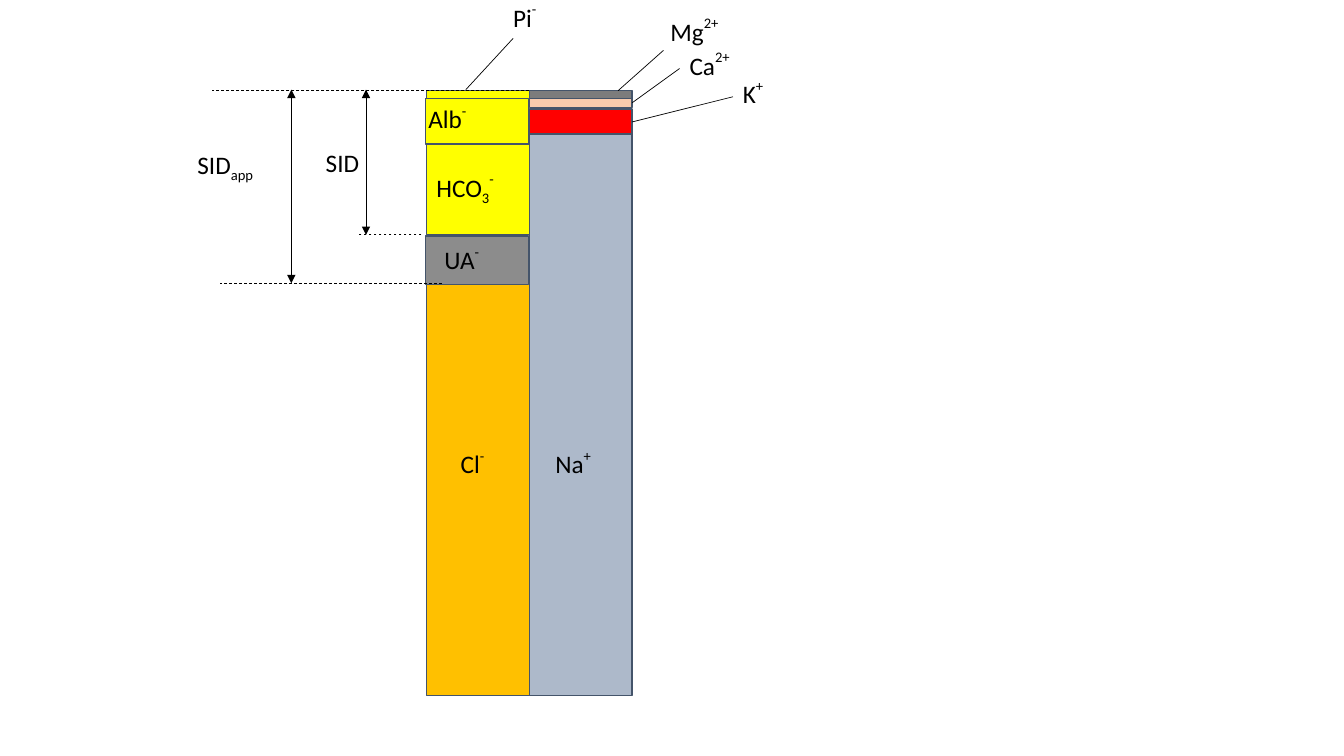
from lxml import etree
from pptx import Presentation
from pptx import util as u
from pptx.dml.color import RGBColor
from pptx.enum import dml, shapes, text
from pptx.oxml import ns

PX = 9144  # EMU per px, 100 px to the inch
BLACK = RGBColor(0x00, 0x00, 0x00)
SLATE = RGBColor(0x44, 0x54, 0x6A)
BLUE_GRAY = RGBColor(0xAD, 0xB9, 0xCA)
RED = RGBColor(0xFF, 0x00, 0x00)
PEACH = RGBColor(0xF8, 0xCB, 0xAD)
DARK_GRAY = RGBColor(0x7C, 0x7C, 0x7C)
GRAY = RGBColor(0x8C, 0x8C, 0x8C)
ORANGE = RGBColor(0xFF, 0xC0, 0x00)
YELLOW = RGBColor(0xFF, 0xFF, 0x00)
BAR_WIDTH = 102
ANION_LEFT, CATION_LEFT = 423, 525
SUPER, SUB = 50000, -25000

deck = Presentation()
deck.slide_width, deck.slide_height = 1333 * PX, 750 * PX
page = deck.slides.add_slide(deck.slide_layouts[6])


def add_block(parent, left, top, height, color):
    block = parent.shapes.add_shape(
        shapes.MSO_SHAPE.RECTANGLE, left * PX, top * PX, BAR_WIDTH * PX, height * PX)
    block.shadow.inherit = False
    block.fill.solid()
    block.fill.fore_color.rgb = color
    block.line.color.rgb = SLATE
    block.line.width = u.Pt(1)


def add_label(parent, left, top, width, height, parts, wrap=False, align=None):
    box = parent.shapes.add_textbox(left * PX, top * PX, width * PX, height * PX)
    frame = box.text_frame
    frame.word_wrap = wrap
    frame.auto_size = text.MSO_AUTO_SIZE.SHAPE_TO_FIT_TEXT
    para = frame.paragraphs[0]
    para.alignment = align
    para.font.name = "Calibri"
    para.font.size = u.Pt(18)
    para.font.color.rgb = BLACK
    for words, baseline in parts:
        span = para.add_run()
        span.text = words
        if baseline:
            span._r.get_or_add_rPr().set("baseline", str(baseline))


# Stacked ion columns
for left, top, height, color in [
    (CATION_LEFT, 133, 557, BLUE_GRAY),
    (CATION_LEFT, 108, 25, RED),
    (CATION_LEFT, 96, 11, PEACH),
    (CATION_LEFT, 90, 8, DARK_GRAY),
    (ANION_LEFT, 281, 409, ORANGE),
    (ANION_LEFT, 90, 10, YELLOW),
]:
    add_block(page, left, top, height, color)

# Ion labels
for left, top, width, ion, charge in [
    (499, -5, 56, "Pi", "-"),
    (655, 9, 91, "Mg", "2+"),
    (674, 43, 81, "Ca", "2+"),
    (727, 71, 57, "K", "+"),
    (541, 438, 72, "Na", "+"),
    (447, 438, 59, "Cl", "-"),
]:
    add_label(page, left, top, width, 50, [(ion, 0), (charge, SUPER)])

# Anion blocks grouped with their labels
for left, top, height, color, label_at, parts in [
    (422, 234, 48, GRAY, (431, 236, 76), [("UA", 0), ("-", SUPER)]),
    (423, 143, 90, YELLOW, (423, 164, 110), [("HCO", 0), ("3", SUB), ("-", SUPER)]),
    (422, 98, 45, YELLOW, (415, 96, 78), [("Alb", 0), ("-", SUPER)]),
]:
    group = page.shapes.add_group_shape()
    add_block(group, left, top, height, color)
    add_label(group, *label_at, 50, parts)

# Leader lines, dashed limits and double-headed spans
for ends, style in [
    ((658, 50, 613, 90), "leader"),
    ((674, 68, 627, 102), "leader"),
    ((727, 96, 627, 121), "leader"),
    ((462, 89, 509, 38), "leader"),
    ((438, 281, 218, 281), "limit"),
    ((525, 90, 210, 90), "limit"),
    ((418, 233, 354, 233), "limit"),
    ((289, 89, 289, 281), "span"),
    ((363, 89, 363, 233), "span"),
]:
    connector = page.shapes.add_connector(
        shapes.MSO_CONNECTOR.STRAIGHT, *[end * PX for end in ends])
    connector.line.color.rgb = BLACK
    connector.line.width = u.Pt(0.5)
    properties = connector.element.spPr
    if style == "limit":
        connector.line.dash_style = dml.MSO_LINE.DASH
    elif style == "span":
        outline = properties.find(ns.qn("a:ln"))
        for arrow in ("a:headEnd", "a:tailEnd"):
            etree.SubElement(outline, ns.qn(arrow), type="triangle")
    etree.SubElement(properties, ns.qn("a:effectLst"))

# Strong ion difference labels
add_label(page, 186, 143, 107, 40, [("SID", 0), ("app", SUB)], wrap=True)
add_label(page, 297, 141, 69, 40, [("SID", 0)], wrap=True, align=text.PP_ALIGN.RIGHT)

deck.save("out.pptx")
